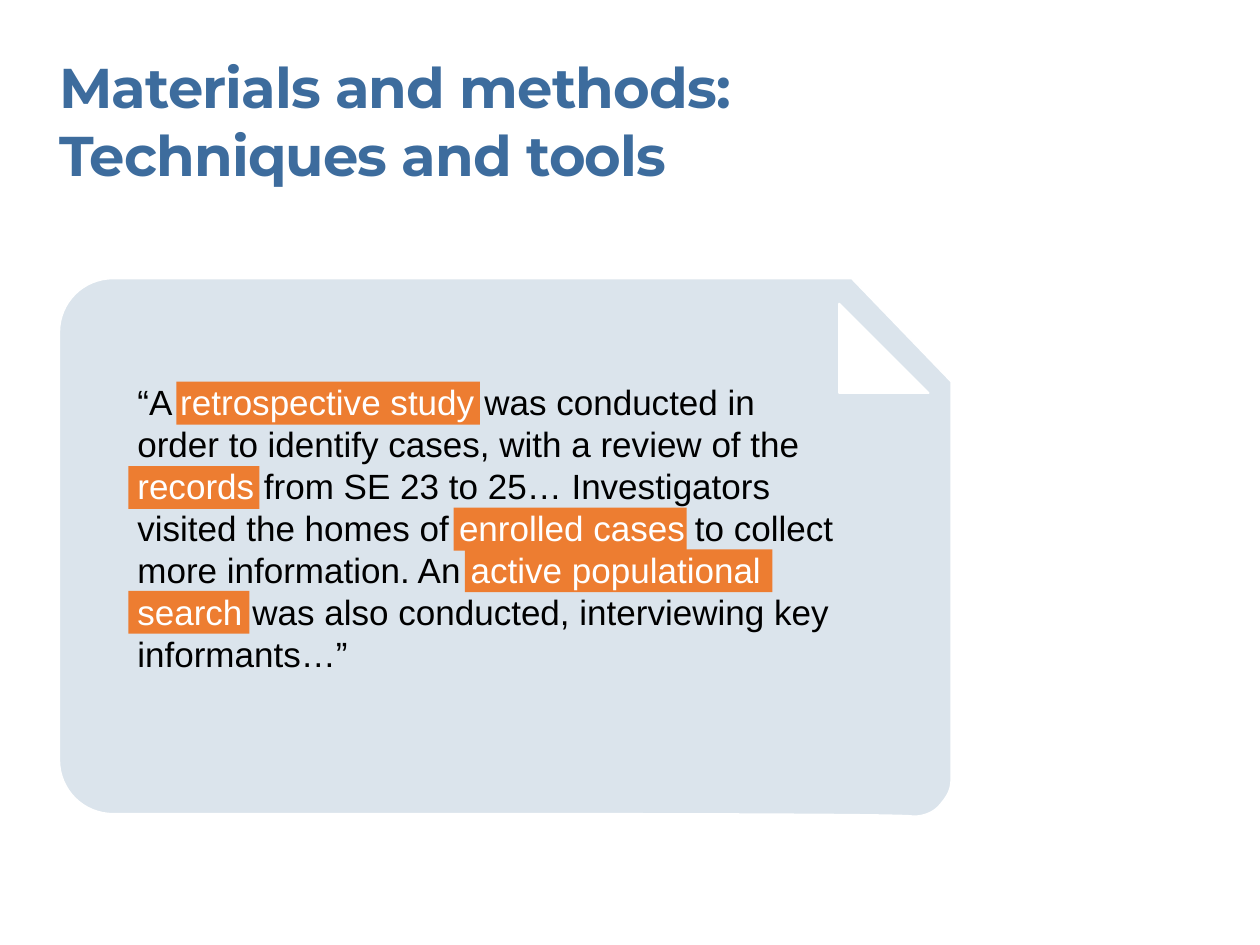
from typing import NamedTuple

from pptx import Presentation
from pptx.dml.color import RGBColor
from pptx.enum.shapes import MSO_SHAPE as Shape
from pptx.util import Inches, Pt

BLUE = RGBColor(0x3D, 0x6C, 0x9D)
PALE = RGBColor(0xDB, 0xE4, 0xEC)
ORANGE = RGBColor(0xED, 0x7D, 0x31)
WHITE = RGBColor(0xFF, 0xFF, 0xFF)
BLACK = RGBColor(0, 0, 0)

Point = tuple[float, float]


class Highlight(NamedTuple):
    left: float
    top: float
    width: float


class Phrase(NamedTuple):
    text: str
    marked: bool = False


HIGHLIGHT_HEIGHT = 0.34
HIGHLIGHTS = [
    Highlight(3.6, 4.03, 1.85),
    Highlight(3.69, 4.36, 2.44),
    Highlight(1.02, 4.69, 0.96),
    Highlight(1.02, 3.7, 1.04),
    Highlight(1.4, 3.03, 2.41),
]
QUOTE = [
    Phrase("“A "),
    Phrase("retrospective study ", True),
    Phrase("was conducted in order to identify cases, with a review of the "),
    Phrase("records", True),
    Phrase(" from SE 23 to 25… Investigators visited the homes of "),
    Phrase("enrolled cases ", True),
    Phrase("to collect more information. An "),
    Phrase("active populational search", True),
    Phrase(" was also conducted, interviewing key informants…”"),
]
TITLE = ["Materials and methods:", "Techniques and tools"]


def curve(a: Point, b: Point, c: Point, d: Point, steps: int = 16) -> list[Point]:
    """Points along a cubic Bezier curve, without its start."""
    points = []
    for i in range(1, steps + 1):
        t = i / steps
        weights = ((1 - t) ** 3, 3 * t * (1 - t) ** 2, 3 * t * t * (1 - t), t ** 3)
        x, y = (sum(w * v for w, v in zip(weights, axis)) for axis in zip(a, b, c, d))
        points.append((x, y))
    return points


def add_note(s) -> None:
    """Note sheet with rounded corners and a cut-out fold."""
    outline = [
        (0.9, 2.21), (6.76, 2.21), (7.55, 3.03), (7.55, 6.18),
        *curve((7.55, 6.18), (7.55, 6.27), (7.52, 6.32), (7.46, 6.39)),
        *curve((7.46, 6.39), (7.41, 6.45), (7.33, 6.48), (7.25, 6.48)),
        *curve((7.25, 6.48), (7.27, 6.46), (4.57, 6.46), (4.57, 6.46)),
        (0.9, 6.46),
        *curve((0.9, 6.46), (0.66, 6.46), (0.47, 6.27), (0.47, 6.03)),
        (0.47, 2.64),
        *curve((0.47, 2.64), (0.47, 2.4), (0.66, 2.21), (0.9, 2.21)),
    ]
    fold = [(6.66, 2.41), (6.66, 3.12), (7.37, 3.12)]

    # Freeform coordinates are whole numbers, so draw in EMU
    start, *rest = [(Inches(x), Inches(y)) for x, y in outline]
    fold_start, *fold_rest = [(Inches(x), Inches(y)) for x, y in fold]
    builder = s.shapes.build_freeform(*start)
    builder.add_line_segments(rest)
    builder.move_to(*fold_start)
    builder.add_line_segments(fold_rest)
    sp = builder.convert_to_shape()
    sp.shadow.inherit = False
    sp.fill.solid()
    sp.fill.fore_color.rgb = PALE
    sp.line.color.rgb = WHITE
    sp.line.width = Pt(1.06)


def add_highlight(s, mark: Highlight) -> None:
    sp = s.shapes.add_shape(Shape.RECTANGLE, Inches(mark.left), Inches(mark.top),
                            Inches(mark.width), Inches(HIGHLIGHT_HEIGHT))
    sp.shadow.inherit = False
    sp.fill.solid()
    sp.fill.fore_color.rgb = ORANGE
    sp.line.fill.background()


def add_text_frame(s, left: float, top: float, width: float, height: float):
    """Wrapping text box without insets."""
    box = s.shapes.add_textbox(Inches(left), Inches(top), Inches(width), Inches(height))
    tf = box.text_frame
    tf.word_wrap = True
    tf.margin_left = tf.margin_top = tf.margin_right = tf.margin_bottom = 0
    return tf


def add_title(s) -> None:
    tf = add_text_frame(s, 0.47, 0.42, 6.3, 1.08)
    tf.text = "\n".join(TITLE)
    for p in tf.paragraphs:
        p.font.name, p.font.size, p.font.bold = "Montserrat", Pt(32), True
        p.font.color.rgb = BLUE
        for r in p.runs:
            r.font._element.set("spc", "-50")


def add_quote(s) -> None:
    p = add_text_frame(s, 1.09, 3.02, 5.55, 2.36).paragraphs[0]
    p.font.name, p.font.size = "Arial", Pt(20)
    p.line_spacing, p.space_before = Pt(24), Pt(1)
    for phrase in QUOTE:
        r = p.add_run()
        r.text = phrase.text
        r.font.color.rgb = WHITE if phrase.marked else BLACK


def main() -> None:
    prs = Presentation()
    prs.slide_width, prs.slide_height = Inches(10), Inches(7.5)
    s = prs.slides.add_slide(prs.slide_layouts[6])

    # Note with highlighted places
    add_note(s)
    for mark in HIGHLIGHTS:
        add_highlight(s, mark)

    # Title and quotation
    add_title(s)
    add_quote(s)

    prs.save("out.pptx")


if __name__ == "__main__":
    main()
